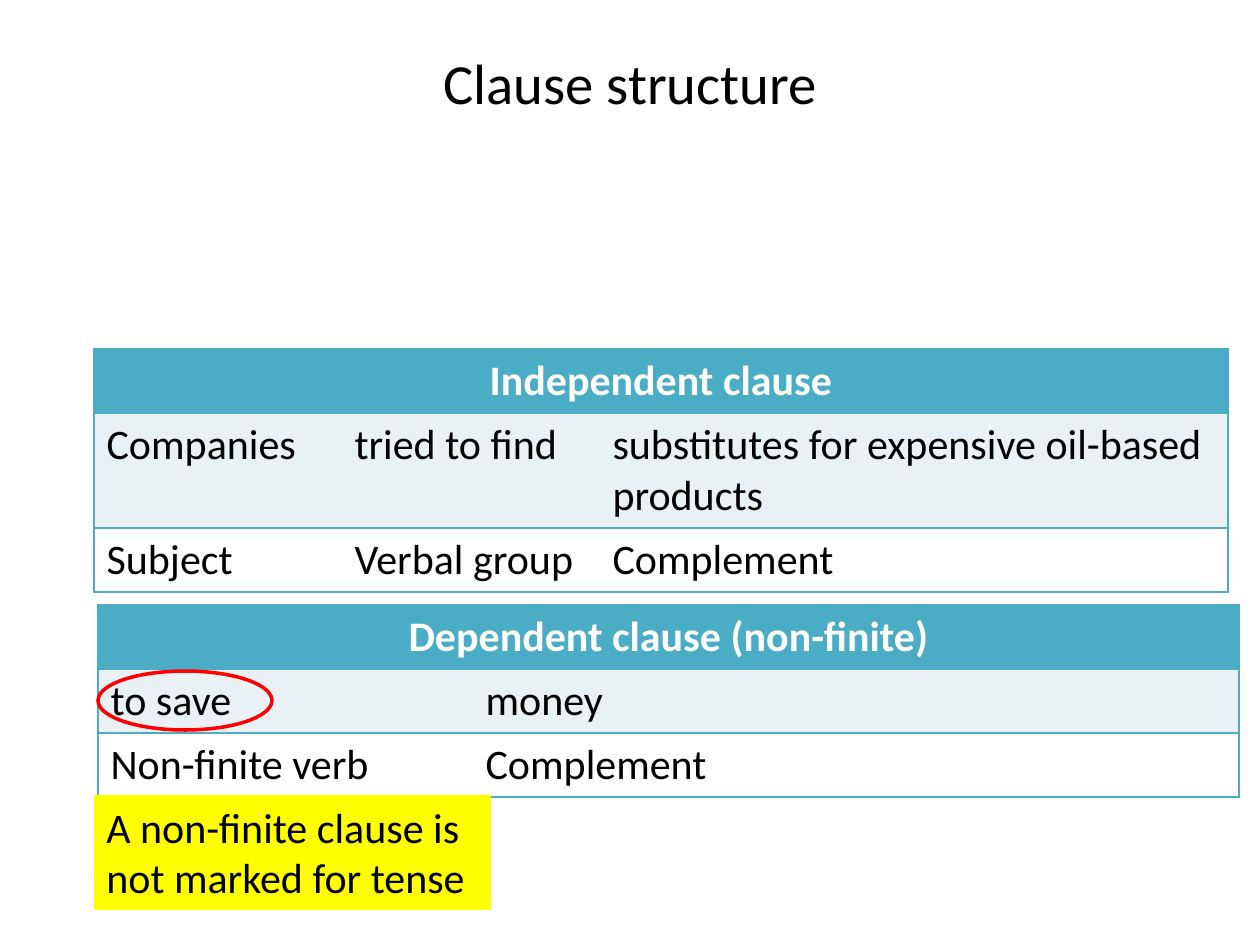
import pptx
import pptx.util
import pptx.dml.color
import pptx.enum.shapes
import pptx.enum.text
import pptx.oxml
import pptx.oxml.ns

RGB = pptx.dml.color.RGBColor
ALIGN = pptx.enum.text.PP_ALIGN
ANCHOR = pptx.enum.text.MSO_ANCHOR
SHAPE = pptx.enum.shapes.MSO_SHAPE

BLACK = RGB(0, 0, 0)
WHITE = RGB(255, 255, 255)
TEAL = RGB(0x4B, 0xAC, 0xC6)
PALE = RGB(0xE9, 0xF1, 0xF5)
RED = RGB(255, 0, 0)
YELLOW = RGB(255, 255, 0)
FONT = "Calibri"
ROW = 64


def px(n):
    return pptx.util.Emu(round(n * 914400 / 126))


def write(frame, text, size=24, color=BLACK, bold=False, align=ALIGN.LEFT):
    frame.word_wrap = True
    par = frame.paragraphs[0]
    par.text = text
    par.alignment = align
    font = par.font
    font.name, font.size, font.bold = FONT, pptx.util.Pt(size), bold
    font.color.rgb = color


def add_text(slide, box, text, **look):
    shape = slide.shapes.add_textbox(*map(px, box))
    write(shape.text_frame, text, **look)
    return shape


def edge(cell, sides):
    """Draw teal lines on the given sides (of L, R, T, B) and none elsewhere."""
    props = cell._tc.get_or_add_tcPr()
    space = pptx.oxml.ns.nsdecls("a")
    for spot, side in enumerate("LRTB"):
        fill = "<a:noFill/>"
        if side in sides:
            fill = f'<a:solidFill><a:srgbClr val="{TEAL}"/></a:solidFill>'
        line = f'<a:ln{side} {space} w="12700">{fill}</a:ln{side}>'
        props.insert(spot, pptx.oxml.parse_xml(line))


def paint(cell, color, sides):
    cell.fill.solid()
    cell.fill.fore_color.rgb = color
    edge(cell, sides)


def add_clause(slide, left, top, cols, rows, head, body):
    """Add a table with one merged heading row above the body rows."""
    frame = slide.shapes.add_table(
        len(rows), len(cols), px(left), px(top), px(sum(cols)), px(sum(rows)))
    table = frame.table
    for col, width in zip(table.columns, cols):
        col.width = px(width)
    for row, height in zip(table.rows, rows):
        row.height = px(height)

    first = table.cell(0, 0)
    first.merge(table.cell(0, len(cols) - 1))
    write(first.text_frame, head, color=WHITE, bold=True, align=ALIGN.CENTER)
    first.vertical_anchor = ANCHOR.MIDDLE
    paint(first, TEAL, "LRTB")

    last = len(cols) - 1
    for r, (texts, color) in enumerate(zip(body, (PALE, WHITE)), 1):
        for c, text in enumerate(texts):
            cell = table.cell(r, c)
            write(cell.text_frame, text)
            sides = "TB" + "L" * (c == 0) + "R" * (c == last)
            paint(cell, color, sides)


def add_ring(slide, box):
    ring = slide.shapes.add_shape(SHAPE.OVAL, *map(px, box))
    ring.shadow.inherit = False
    ring.fill.background()
    ring.line.color.rgb = RED
    ring.line.width = pptx.util.Pt(2)


def main():
    deck = pptx.Presentation()
    deck.slide_width, deck.slide_height = px(1260), px(945)
    slide = deck.slides.add_slide(deck.slide_layouts[6])

    title = add_text(slide, (63, 38, 1134, 87), "Clause structure",
                     size=32.4, align=ALIGN.CENTER)
    title.text_frame.vertical_anchor = ANCHOR.MIDDLE

    add_clause(slide, 94, 349, (248, 258, 628), (ROW, 115, ROW),
               "Independent clause",
               (("Companies", "tried to find",
                 "substitutes for expensive oil-based products"),
                ("Subject", "Verbal group", "Complement")))
    add_clause(slide, 98, 605, (375, 375, 391), (ROW, ROW, ROW),
               "Dependent clause (non-finite)",
               (("to save", "money", ""),
                ("Non-finite verb", "Complement", "")))
    add_ring(slide, (98, 671, 174, 59))

    note = add_text(slide, (94, 795, 397, 115),
                    "A non-finite clause is not marked for tense")
    note.fill.solid()
    note.fill.fore_color.rgb = YELLOW

    deck.save("out.pptx")


if __name__ == "__main__":
    main()
